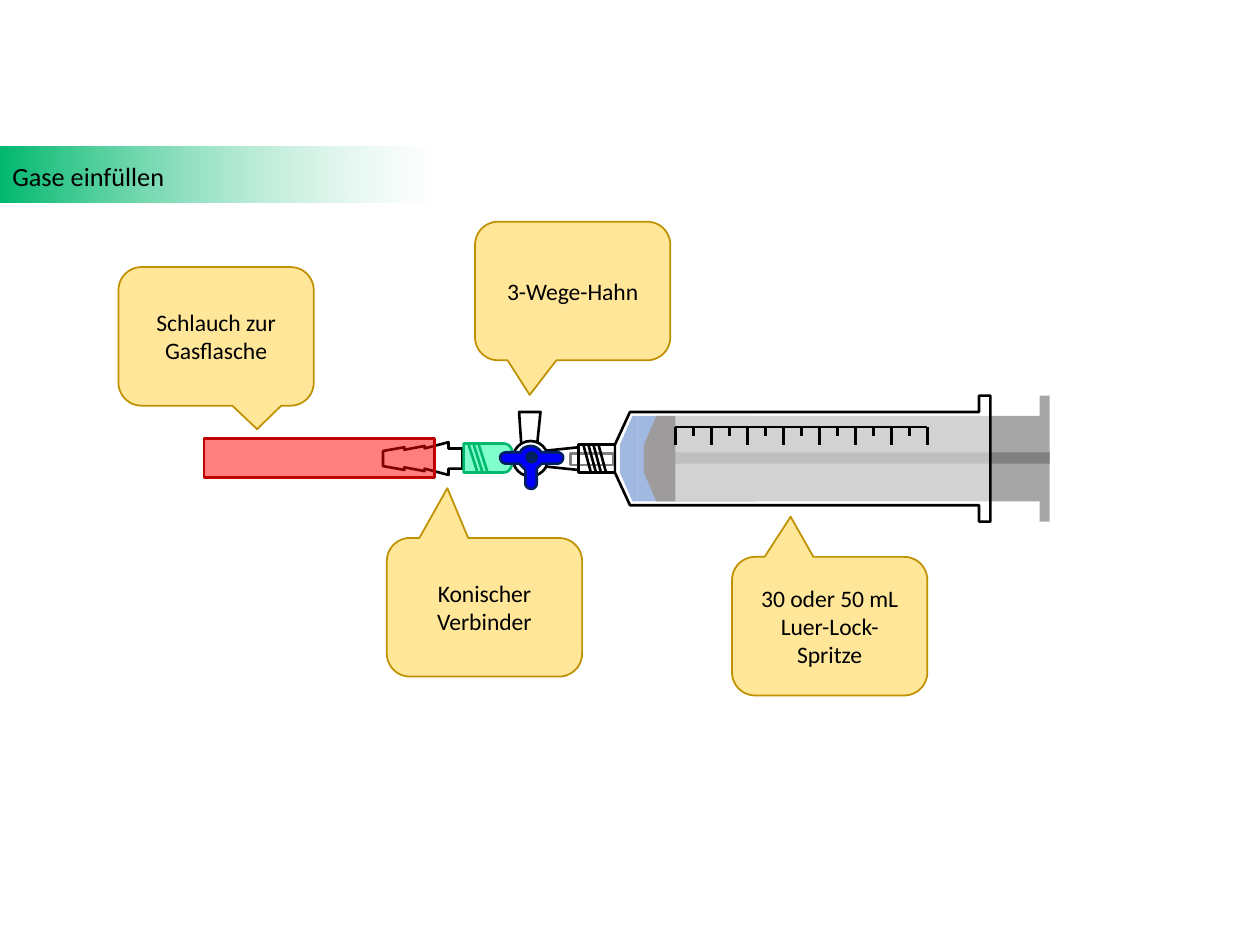
from lxml import etree
from pptx import Presentation
from pptx.dml.color import RGBColor
from pptx.enum import shapes as kinds, text
from pptx.oxml.ns import qn
from pptx.util import Inches, Pt

BLACK = RGBColor(0, 0, 0)
WHITE = RGBColor(255, 255, 255)
GREEN = RGBColor(0x00, 0xB8, 0x6E)
MINT = RGBColor(0x80, 0xFF, 0xCC)
HOSE_RED = RGBColor(0xFF, 0, 0)
HOSE_EDGE = RGBColor(0xC0, 0, 0)
GAS_BLUE = RGBColor(0x44, 0x72, 0xC4)
PLUNGER_GRAY = RGBColor(0xA6, 0xA6, 0xA6)
ROD_GRAY = RGBColor(0x80, 0x80, 0x80)
STOPPER = RGBColor(0x3B, 0x38, 0x38)
HANDLE_BLUE = RGBColor(0, 0, 0xFF)
NAVY = RGBColor(0x00, 0x20, 0x60)
CALLOUT_FILL = RGBColor(0xFF, 0xE6, 0x99)
CALLOUT_EDGE = RGBColor(0xBF, 0x90, 0x00)

RECT = kinds.MSO_SHAPE.RECTANGLE
OVAL = kinds.MSO_SHAPE.OVAL
AXIS = 3.64  # height of the centre line of the whole assembly


def set_opacity(fill_element, index, percent):
    color = list(fill_element.iter(qn("a:srgbClr")))[index]
    etree.SubElement(color, qn("a:alpha")).set("val", str(percent * 1000))


def paint(shape, fill=None, edge=None, opacity=100, width=1.5):
    shape.shadow.inherit = False
    if fill is None:
        shape.fill.background()
    else:
        shape.fill.solid()
        shape.fill.fore_color.rgb = fill
        if opacity < 100:
            set_opacity(shape._element.spPr.find(qn("a:solidFill")), 0, opacity)
    if edge is None:
        shape.line.fill.background()
    else:
        shape.line.color.rgb = edge
        shape.line.width = Pt(width)


def add_preset(slide, preset, box, **look):
    shape = slide.shapes.add_shape(preset, *map(Inches, box))
    paint(shape, **look)
    return shape


def bezier(start, curve, steps=8):
    """Points along a cubic curve given as (x1, y1, x2, y2, x3, y3)."""
    controls = [start, curve[:2], curve[2:4], curve[4:]]
    for step in range(1, steps + 1):
        t = step / steps
        weights = ((1 - t) ** 3, 3 * t * (1 - t) ** 2, 3 * t * t * (1 - t), t ** 3)
        yield tuple(sum(w * c[i] for w, c in zip(weights, controls)) for i in (0, 1))


def add_outline(slide, steps, **look):
    """Closed outline; a step is a point (x, y) or a cubic curve of six numbers."""
    points = []
    for step in steps:
        points.extend([step] if len(step) == 2 else bezier(points[-1], step))
    points = [(Inches(x), Inches(y)) for x, y in points]
    builder = slide.shapes.build_freeform(*points[0], scale=1.0)
    builder.add_line_segments(points[1:], close=True)
    paint(builder.convert_to_shape(), **look)


def add_symmetric(slide, half, **look):
    """Outline mirrored about the axis, from (x, distance to axis) pairs."""
    upper = [(x, AXIS - d) for x, d in half]
    lower = [(x, AXIS + d) for x, d in reversed(half)]
    add_outline(slide, upper + lower, **look)


def add_line(slide, start, end, color=BLACK):
    line = slide.shapes.add_connector(
        kinds.MSO_CONNECTOR.STRAIGHT, *map(Inches, start + end))
    line.line.color.rgb = color
    line.line.width = Pt(1.5)
    etree.SubElement(line._element.spPr, qn("a:effectLst"))


def write(frame, words, size):
    run = frame.paragraphs[0].add_run()
    run.text = words
    run.font.size = Pt(size)
    run.font.name = "Calibri"
    run.font.color.rgb = BLACK


def add_heading(slide):
    band = add_preset(slide, RECT, (0, 1.16, 3.44, 0.45))
    band.fill.gradient()
    band.fill.gradient_angle = 180
    for stop, color, position in zip(band.fill.gradient_stops, (WHITE, GREEN), (0, 1)):
        stop.color.rgb = color
        stop.position = position
    set_opacity(band._element.spPr.find(qn("a:gradFill")), 0, 42)
    heading = slide.shapes.add_textbox(*map(Inches, (0, 1.22, 1.42, 0.35)))
    heading.text_frame.word_wrap = False
    write(heading.text_frame, "Gase einfüllen", 15)


def add_hose(slide):
    barbs = [(3.04, 0.06), (3.21, 0.09), (3.21, 0.07), (3.37, 0.1), (3.37, 0.08),
             (3.56, 0.13), (3.56, 0.08), (3.67, 0.08)]
    add_symmetric(slide, barbs, fill=WHITE, edge=BLACK)
    add_preset(slide, RECT, (1.62, 3.48, 1.83, 0.31),
               fill=HOSE_RED, edge=HOSE_EDGE, opacity=50)


def add_syringe(slide):
    add_symmetric(slide, [(4.92, 0.11), (5.02, 0.34), (5.06, 0.34)], fill=GAS_BLUE)
    add_preset(slide, RECT, (5.06, 3.3, 0.93, 0.68), fill=GAS_BLUE)
    add_symmetric(slide, [(5.34, 0.34), (8.25, 0.34), (8.25, 0.5), (8.33, 0.5)],
                  fill=PLUNGER_GRAY)
    add_preset(slide, RECT, (5.25, 3.59, 3.08, 0.09), fill=ROD_GRAY)
    add_symmetric(slide, [(5.11, 0.11), (5.21, 0.34), (5.36, 0.34)], fill=STOPPER)
    add_preset(slide, RECT, (4.53, 3.6, 0.34, 0.09), edge=BLACK)
    barrel = [(4.88, 0.11), (5, 0.37), (7.77, 0.37), (7.77, 0.5), (7.86, 0.5)]
    glass = dict(fill=WHITE, edge=BLACK, opacity=50)
    add_symmetric(slide, barrel, **glass)
    add_preset(slide, RECT, (4.59, 3.53, 0.29, 0.22), **glass)
    for thread in range(4):
        x = 4.63 + thread * 0.04
        add_line(slide, (x + 0.06, 3.75), (x, 3.53))


def add_scale(slide):
    left, right, top, intervals = 5.36, 7.36, 3.39, 14
    add_line(slide, (left, top), (right, top))
    for tick in range(intervals + 1):
        x = left + tick * (right - left) / intervals
        add_line(slide, (x, top), (x, 3.46 if tick % 2 else 3.53))


def add_stopcock(slide):
    glass = dict(fill=WHITE, edge=BLACK, opacity=50)
    add_outline(slide, [(4.12, 3.27), (4.29, 3.27), (4.26, 3.56), (4.14, 3.56)], **glass)
    add_symmetric(slide, [(4.3, 0.06), (4.59, 0.09)], **glass)
    add_preset(slide, OVAL, (4.07, 3.5, 0.28, 0.28), fill=WHITE, edge=BLACK)
    add_outline(slide, [(3.68, 3.52), (3.68, 3.75), (4, 3.75),
                        (4.04, 3.75, 4.07, 3.71, 4.07, 3.63),
                        (4.07, 3.55, 4.04, 3.52, 3.99, 3.52)], fill=MINT, edge=GREEN)
    for x in (3.72, 3.76, 3.8):
        add_line(slide, (x, 3.53), (x + 0.07, 3.75), GREEN)
    handle = [
        (3.97, 3.63), (3.97, 3.61, 3.99, 3.59, 4.02, 3.59), (4.13, 3.59), (4.14, 3.57),
        (4.16, 3.55, 4.19, 3.54, 4.21, 3.54), (4.24, 3.54, 4.26, 3.55, 4.28, 3.57),
        (4.3, 3.59), (4.42, 3.59), (4.45, 3.59, 4.47, 3.61, 4.47, 3.63),
        (4.47, 3.66, 4.45, 3.68, 4.42, 3.68), (4.3, 3.68), (4.26, 3.72), (4.26, 3.84),
        (4.26, 3.86, 4.24, 3.88, 4.22, 3.88), (4.19, 3.88, 4.17, 3.86, 4.17, 3.84),
        (4.17, 3.73), (4.12, 3.68), (4.02, 3.68), (3.99, 3.68, 3.97, 3.66, 3.97, 3.63)]
    add_outline(slide, handle, fill=HANDLE_BLUE, edge=NAVY)
    add_preset(slide, OVAL, (4.17, 3.58, 0.1, 0.1), fill=NAVY)


def add_callout(slide, words, left, top, tip_x, tip_y):
    """Label whose tip is given as an offset from its centre, in widths and heights."""
    callout = add_preset(slide, kinds.MSO_SHAPE.ROUNDED_RECTANGULAR_CALLOUT,
                         (left, top, 1.55, 1.1),
                         fill=CALLOUT_FILL, edge=CALLOUT_EDGE, width=1)
    callout.adjustments[0] = tip_x
    callout.adjustments[1] = tip_y
    frame = callout.text_frame
    frame.word_wrap = True
    frame.vertical_anchor = text.MSO_ANCHOR.MIDDLE
    frame.paragraphs[0].alignment = text.PP_ALIGN.CENTER
    write(frame, words, 13.5)


def main():
    deck = Presentation()
    deck.slide_width, deck.slide_height = Inches(10), Inches(7.5)
    slide = deck.slides.add_slide(deck.slide_layouts[6])
    add_heading(slide)
    add_hose(slide)
    add_syringe(slide)
    add_scale(slide)
    add_stopcock(slide)
    add_callout(slide, "3-Wege-Hahn", 3.77, 1.76, -0.22, 0.75)
    add_callout(slide, "30 oder 50 mL Luer-Lock-Spritze", 5.81, 4.42, -0.2, -0.79)
    add_callout(slide, "Konischer Verbinder", 3.07, 4.27, -0.19, -0.86)
    add_callout(slide, "Schlauch zur Gasflasche", 0.94, 2.12, 0.21, 0.67)
    deck.save("out.pptx")


if __name__ == "__main__":
    main()
